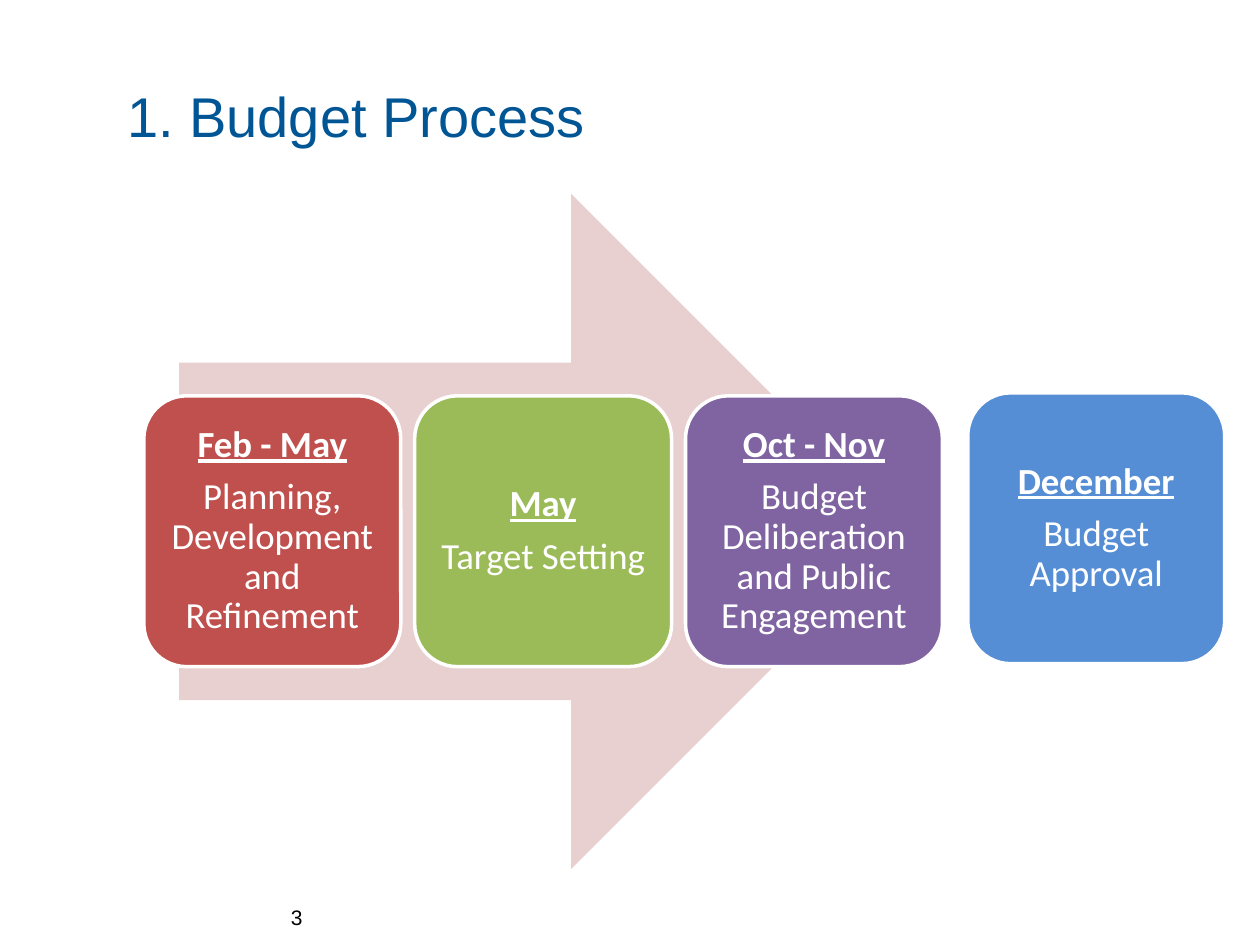
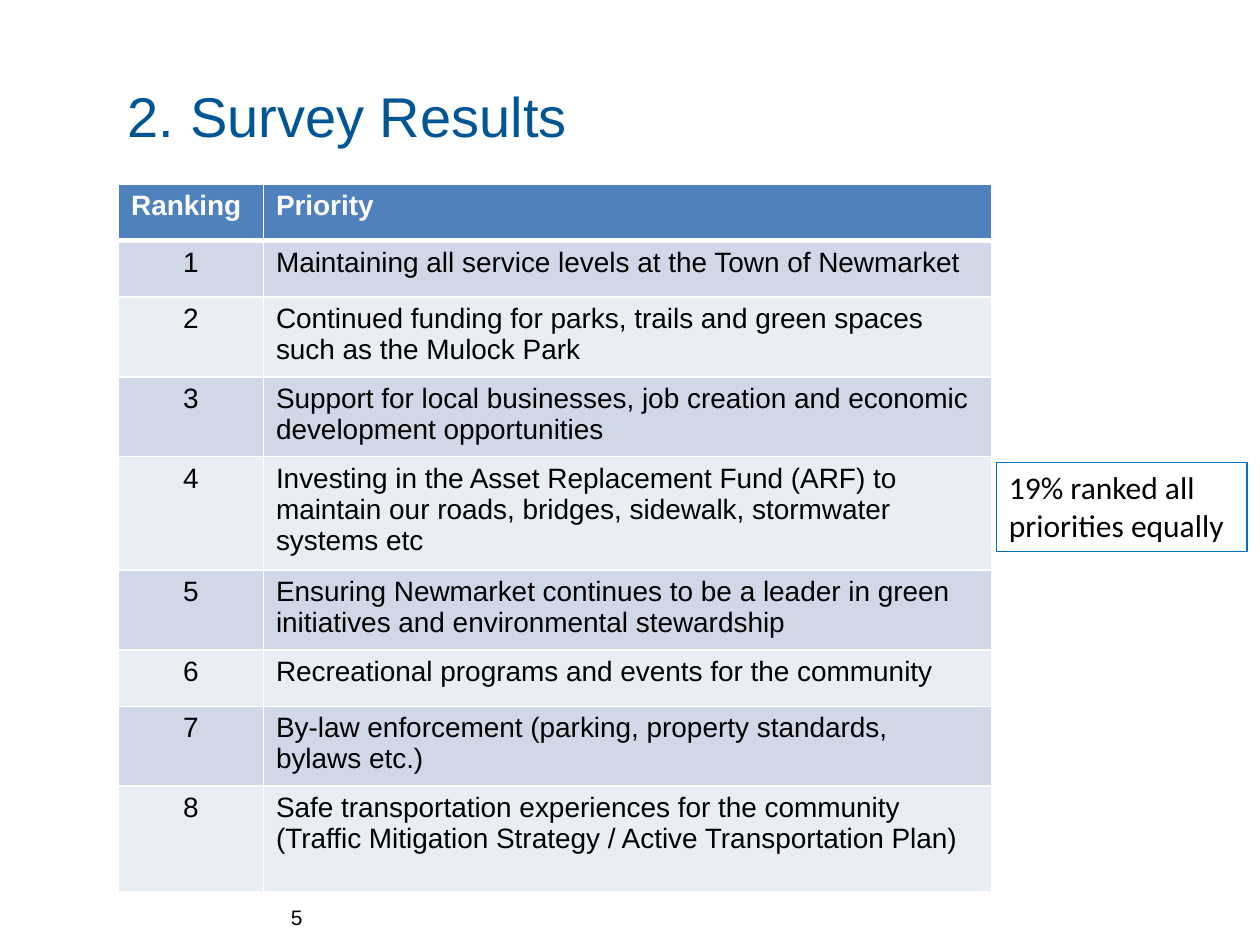
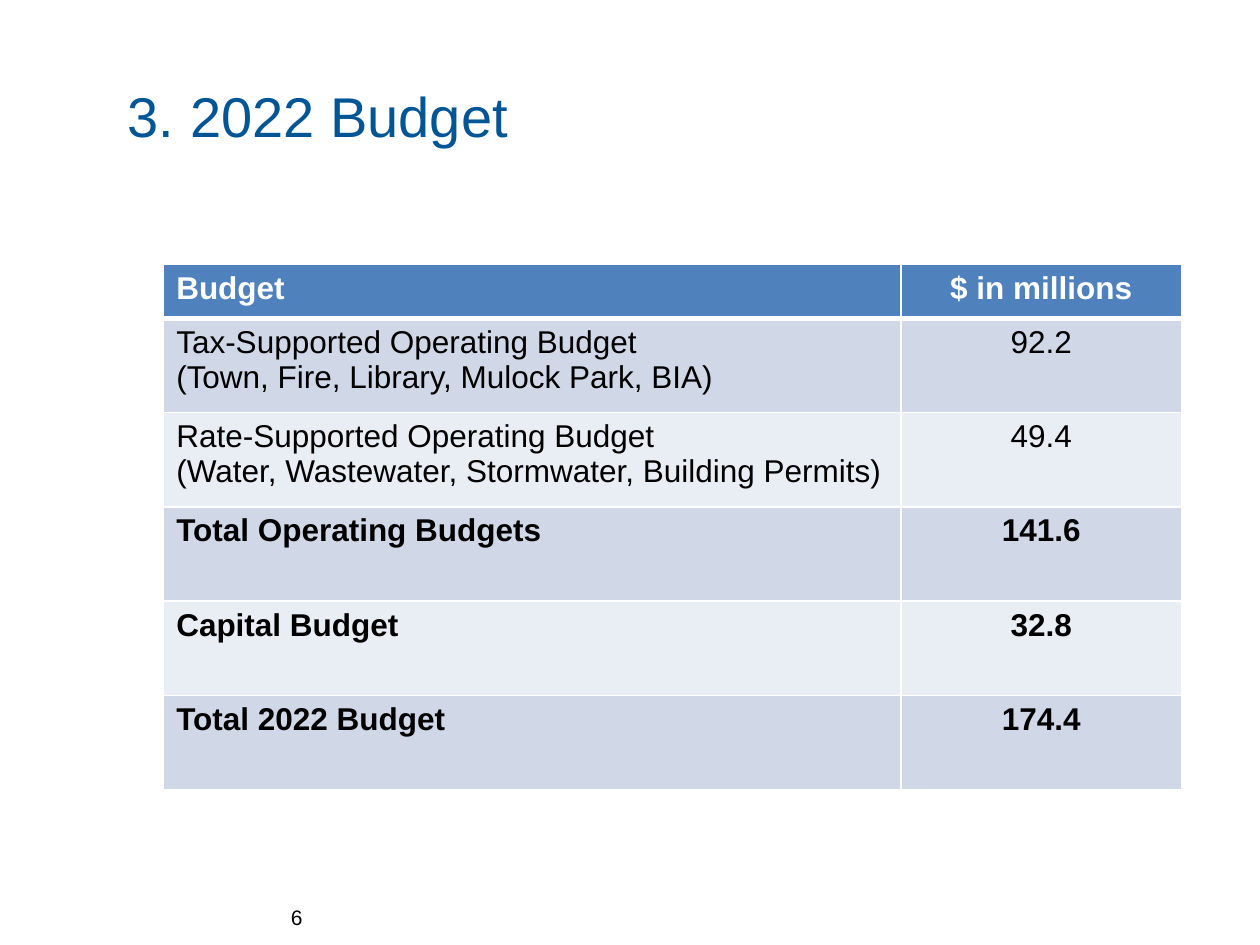
from lxml import etree
from pptx import Presentation
from pptx.dml.color import RGBColor
from pptx.enum.shapes import MSO_SHAPE
from pptx.enum.text import MSO_ANCHOR, PP_ALIGN
from pptx.oxml.ns import qn
from pptx.util import Cm, Pt

LEFT, CENTER, RIGHT = PP_ALIGN.LEFT, PP_ALIGN.CENTER, PP_ALIGN.RIGHT
TOP, MIDDLE = MSO_ANCHOR.TOP, MSO_ANCHOR.MIDDLE
RECT, ROUND_RECT, ARROW = MSO_SHAPE.RECTANGLE, MSO_SHAPE.ROUNDED_RECTANGLE, MSO_SHAPE.RIGHT_ARROW
TITLE_ONLY = 5

BLACK, WHITE = "000000", "FFFFFF"
TITLE_BLUE, HEADER_BLUE, CALLOUT_BLUE = "005595", "4F81BD", "0070C0"
BANDS = ("D0D8E8", "E9EDF4")
ARROW_PINK = "E8D0D0"
HEADING_FONT, BODY_FONT = "Arial", "Calibri"

STAGE_WIDTH, STAGE_HEIGHT = 5.18, 5.46
STAGES = [
    (2.9, 7.98, "C0504D", "Feb - May", "Planning, Development and Refinement"),
    (8.36, 7.98, "9BBB59", "May", "Target Setting"),
    (13.82, 7.98, "8064A2", "Oct - Nov", "Budget Deliberation and Public Engagement"),
    (19.51, 7.92, "558ED5", "December", "Budget Approval"),
]
PRIORITIES = [
    "Maintaining all service levels at the Town of Newmarket",
    "Continued funding for parks, trails and green spaces such as the Mulock Park",
    "Support for local businesses, job creation and economic development opportunities",
    "Investing in the Asset Replacement Fund (ARF) to maintain our roads, bridges, "
    "sidewalk, stormwater systems etc",
    "Ensuring Newmarket continues to be a leader in green initiatives and "
    "environmental stewardship",
    "Recreational programs and events for the community",
    "By-law enforcement (parking, property standards, bylaws etc.)",
    "Safe transportation experiences for the community\n"
    "(Traffic Mitigation Strategy / Active Transportation Plan)",
]
BUDGETS = [
    ("Tax-Supported Operating Budget\n(Town, Fire, Library, Mulock Park, BIA)", "92.2"),
    ("Rate-Supported Operating Budget\n(Water, Wastewater, Stormwater, Building Permits)", "49.4"),
    ("Total Operating Budgets", "141.6"),
    ("Capital Budget", "32.8"),
    ("Total 2022 Budget", "174.4"),
]


def rgb(color):
    return RGBColor.from_string(color)


def style_paragraph(p, size, color, font=HEADING_FONT, align=LEFT, bold=False, underline=False):
    p.alignment = align
    for r in p.runs:
        r.font.name = font
        r.font.size = Pt(size)
        r.font.color.rgb = rgb(color)
        r.font.bold = bold
        r.font.underline = underline


def add_tab_stop(p, position):
    tabs = etree.SubElement(p._p.get_or_add_pPr(), qn("a:tabLst"))
    etree.SubElement(tabs, qn("a:tab"), pos=str(Cm(position)), algn="l")


def add_titled_slide(prs, title, number):
    slide = prs.slides.add_slide(prs.slide_layouts[TITLE_ONLY])
    sp = slide.shapes.title
    sp.left, sp.top, sp.width, sp.height = Cm(2.31), Cm(0.74), Cm(22.86), Cm(3.18)
    tf = sp.text_frame
    tf.text = title
    tf.vertical_anchor = MIDDLE
    p = tf.paragraphs[0]
    if "\t" in title:
        add_tab_stop(p, 1.27)
    style_paragraph(p, 32, TITLE_BLUE)
    add_page_number(slide, number)
    return slide


def add_page_number(slide, number):
    sp = slide.shapes.add_textbox(Cm(2.74), Cm(17.98), Cm(3.61), Cm(1.02))
    tf = sp.text_frame
    tf.word_wrap = True
    tf.vertical_anchor = MIDDLE
    tf.text = str(number)
    style_paragraph(tf.paragraphs[0], 12, BLACK, align=RIGHT)


def add_box(slide, kind, left, top, width, height, fill=None, line=None, line_width=1):
    sp = slide.shapes.add_shape(kind, Cm(left), Cm(top), Cm(width), Cm(height))
    sp.shadow.inherit = False
    if fill:
        sp.fill.solid()
        sp.fill.fore_color.rgb = rgb(fill)
    else:
        sp.fill.background()
    if line:
        sp.line.color.rgb = rgb(line)
        sp.line.width = Pt(line_width)
    else:
        sp.line.fill.background()
    return sp


def add_stage(slide, left, top, color, period, activity):
    sp = add_box(slide, ROUND_RECT, left, top, STAGE_WIDTH, STAGE_HEIGHT, color, WHITE, 2)
    tf = sp.text_frame
    tf.word_wrap = True
    tf.vertical_anchor = MIDDLE
    tf.margin_left = tf.margin_right = tf.margin_top = tf.margin_bottom = Cm(0.23)
    tf.text = f"{period}\n{activity}"
    for p, is_period in zip(tf.paragraphs, (True, False)):
        p.line_spacing = 0.9
        p.space_after = Pt(7.35)
        style_paragraph(p, 21, WHITE, BODY_FONT, CENTER, is_period, is_period)


def add_callout(slide, text, left, top, width, height):
    sp = add_box(slide, RECT, left, top, width, height, line=CALLOUT_BLUE, line_width=0.75)
    tf = sp.text_frame
    tf.word_wrap = True
    tf.vertical_anchor = TOP
    tf.text = text
    style_paragraph(tf.paragraphs[0], 18, BLACK, BODY_FONT)


def set_borders(cell, top, bottom):
    tc_pr = cell._tc.get_or_add_tcPr()
    for side, width in (("L", 1), ("R", 1), ("T", top), ("B", bottom)):
        ln = etree.SubElement(tc_pr, qn(f"a:ln{side}"), w=str(Pt(width)))
        fill = etree.SubElement(ln, qn("a:solidFill"))
        etree.SubElement(fill, qn("a:srgbClr"), val=WHITE)


def add_banded_table(slide, left, top, widths, heights, rows, size, header_aligns,
                     body_aligns, bold_from):
    frame = slide.shapes.add_table(len(rows), len(widths), Cm(left), Cm(top),
                                   Cm(sum(widths)), Cm(sum(heights)))
    table = frame.table
    for column, width in zip(table.columns, widths):
        column.width = Cm(width)
    for i, (row, height, texts) in enumerate(zip(table.rows, heights, rows)):
        row.height = Cm(height)
        is_header = i == 0
        aligns = header_aligns if is_header else body_aligns
        for cell, text, align in zip(row.cells, texts, aligns):
            cell.text = text
            set_borders(cell, 3 if i == 1 else 1, 3 if is_header else 1)
            cell.fill.solid()
            cell.fill.fore_color.rgb = rgb(HEADER_BLUE if is_header else BANDS[(i - 1) % 2])
            for p in cell.text_frame.paragraphs:
                style_paragraph(p, size, WHITE if is_header else BLACK, align=align,
                                bold=is_header or i >= bold_from)


def build_process(prs):
    slide = add_titled_slide(prs, "1. Budget Process", 3)
    add_box(slide, ARROW, 3.61, 3.91, 14.71, 13.61, ARROW_PINK)
    for stage in STAGES:
        add_stage(slide, *stage)


def build_survey(prs):
    slide = add_titled_slide(prs, "2.\tSurvey Results", 5)
    rows = [("Ranking", "Priority")]
    rows += [(str(rank), text) for rank, text in enumerate(PRIORITIES, 1)]
    heights = [1.14, 1.14, 1.57, 1.57, 1.63, 1.57, 1.14, 1.57, 2.13]
    add_banded_table(slide, 2.39, 3.71, [2.92, 14.68], heights, rows, 16,
                     (LEFT, LEFT), (CENTER, LEFT), len(rows))
    add_callout(slide, "19% ranked all priorities equally", 20.09, 9.32, 5.05, 1.8)


def build_budget(prs):
    slide = add_titled_slide(prs, "3.\t2022 Budget", 6)
    rows = [("Budget", "$ in millions")] + BUDGETS
    heights = [1.09] + [1.9] * len(BUDGETS)
    add_banded_table(slide, 3.3, 5.33, [14.86, 5.66], heights, rows, 18,
                     (LEFT, CENTER), (LEFT, CENTER), 3)


def main():
    prs = Presentation()
    prs.slide_width, prs.slide_height = Cm(25.4), Cm(19.05)
    build_process(prs)
    build_survey(prs)
    build_budget(prs)
    prs.save("out.pptx")


if __name__ == "__main__":
    main()
